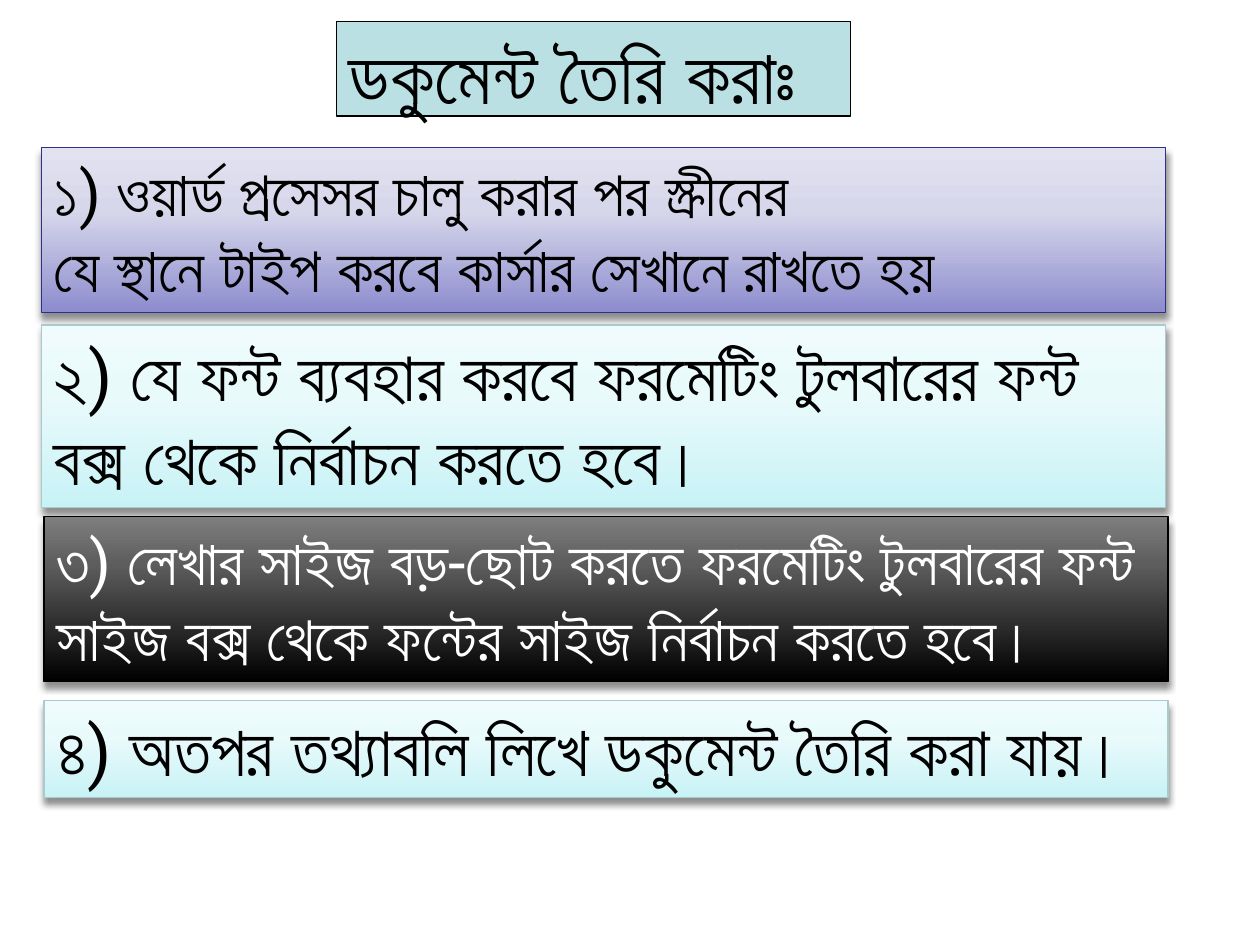
import pptx
import pptx.util
import pptx.dml.color
import pptx.enum.shapes
import pptx.enum.text
import pptx.oxml
import pptx.oxml.ns

Inches = pptx.util.Inches
Pt = pptx.util.Pt

FONT = "Roboto"
WIDE = 8.92
TITLE = "ডকুমেন্ট তৈরি করাঃ"

VIOLET = dict(stops=[(0, "8C8CCE"), (62, "D7D7EB"), (100, "E2E2F0")], line="2E2E8B", ink="000000")
AQUA = dict(stops=[(0, "C8F2F6"), (62, "E9FAFB"), (100, "EFFBFC")], line="AACBCE", ink="000000")
BLACK = dict(stops=[(0, "000000"), (72, "5E5E5E"), (100, "7F7F7F")], line="000000", ink="FFFFFF")

STEPS = [
    (0.33, 1.17, 1.31, 36, VIOLET, ["১) ওয়ার্ড প্রসেসর চালু করার পর স্ক্রীনের",
                                    "যে স্থানে টাইপ করবে কার্সার সেখানে রাখতে হয়"]),
    (0.33, 2.58, 1.45, 40, AQUA, ["২) যে ফন্ট ব্যবহার করবে ফরমেটিং টুলবারের ফন্ট বক্স থেকে নির্বাচন করতে হবে।"]),
    (0.35, 4.1, 1.31, 36, BLACK, ["৩) লেখার সাইজ বড়-ছোট করতে ফরমেটিং টুলবারের ফন্ট সাইজ বক্স থেকে ফন্টের সাইজ নির্বাচন করতে হবে।"]),
    (0.35, 5.56, 0.77, 40, AQUA, ["৪) অতপর তথ্যাবলি লিখে ডকুমেন্ট তৈরি করা যায়।"]),
]


def color(code):
    return pptx.dml.color.RGBColor.from_string(code)


def node(body):
    tag, rest = body.split(" ", 1)
    return pptx.oxml.parse_xml(f"<a:{tag} {pptx.oxml.ns.nsdecls('a')} {rest}")


def add_box(slide, place, lines, size, edge, ink, bold=False):
    box = slide.shapes.add_shape(pptx.enum.shapes.MSO_SHAPE.RECTANGLE, *map(Inches, place))
    box.shadow.inherit = False
    box.line.color.rgb = color(edge)
    box.line.width = Pt(0.75)
    frame = box.text_frame
    frame.word_wrap = True
    frame.vertical_anchor = pptx.enum.text.MSO_ANCHOR.TOP
    frame.text = "\n".join(lines)
    for para in frame.paragraphs:
        para.alignment = pptx.enum.text.PP_ALIGN.LEFT
        para.font.name = FONT
        para.font.size = Pt(size)
        para.font.bold = bold
        para.font.color.rgb = color(ink)
    return box


def add_shade(box, stops):
    marks = "".join(
        f'<a:gs pos="{pos * 1000}"><a:srgbClr val="{code}"/></a:gs>' for pos, code in stops)
    fill = node(f'gradFill rotWithShape="1"><a:gsLst>{marks}</a:gsLst>'
                '<a:lin ang="16200000" scaled="0"/></a:gradFill>')
    props = box._element.spPr
    props.find(pptx.oxml.ns.qn("a:prstGeom")).addnext(fill)
    shade = node(f'outerShdw blurRad="{Pt(4)}" dist="{Pt(3)}" dir="5400000" rotWithShape="0">'
                 '<a:srgbClr val="000000"><a:alpha val="43000"/></a:srgbClr></a:outerShdw>')
    props.find(pptx.oxml.ns.qn("a:effectLst")).append(shade)


def main():
    deck = pptx.Presentation()
    deck.slide_width, deck.slide_height = Inches(10), Inches(7.5)
    slide = deck.slides.add_slide(deck.slide_layouts[6])
    for left, top, high, size, look, lines in STEPS:
        box = add_box(slide, (left, top, WIDE, high), lines, size, look["line"], look["ink"])
        box.text_frame.auto_size = pptx.enum.text.MSO_AUTO_SIZE.SHAPE_TO_FIT_TEXT
        add_shade(box, look["stops"])
    title = add_box(slide, (2.67, 0.17, 4.08, 0.75), [TITLE], 44, "000000", "000000", True)
    title.fill.solid()
    title.fill.fore_color.rgb = color("BBE0E3")
    deck.save("out.pptx")


if __name__ == "__main__":
    main()
